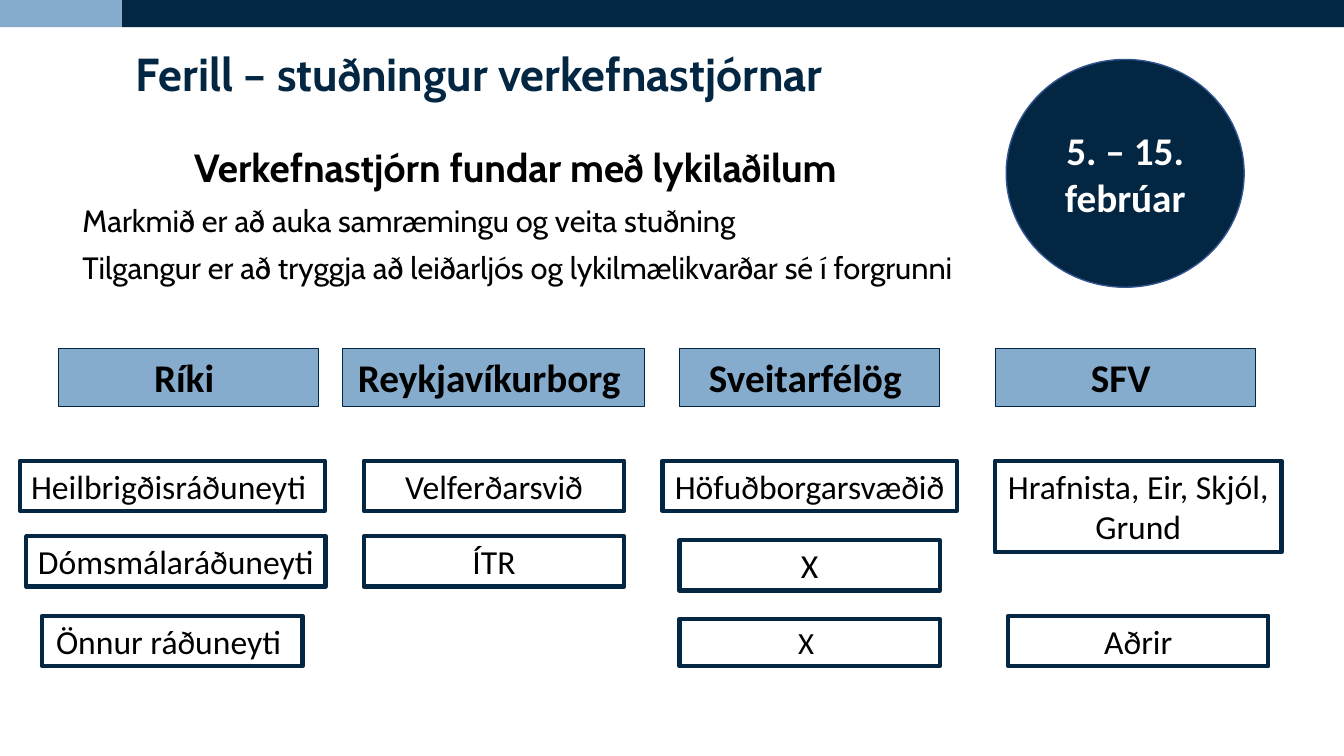
from pptx import Presentation
from pptx.dml.color import RGBColor
from pptx.enum.shapes import MSO_SHAPE as Shape
from pptx.enum.text import MSO_ANCHOR as Anchor, MSO_AUTO_SIZE as AutoSize, PP_ALIGN as Align
from pptx.util import Inches, Pt

COLUMNS, ROWS = 133.3, 75
COLORS = {"navy": "032742", "sky": "85ABCD", "rim": "325491",
          "black": "000000", "white": "FFFFFF"}


class SlideBuilder:
    """Draws on one slide; lengths are columns and rows of a fine grid."""

    def __init__(self, deck):
        self.column = deck.slide_width / COLUMNS
        self.row = deck.slide_height / ROWS
        self.shapes = deck.slides.add_slide(deck.slide_layouts[6]).shapes

    def place(self, left, top, width, height):
        return (round(left * self.column), round(top * self.row),
                round(width * self.column), round(height * self.row))

    def color(self, name):
        return RGBColor.from_string(COLORS[name])

    def add_words(self, paragraph, text, size, font, color="black", bold=False):
        run = paragraph.add_run()
        run.text = text
        run.font.size, run.font.name, run.font.bold = Pt(size), font, bold
        run.font.color.rgb = self.color(color)

    def panel(self, area, fill=None, line=None, weight=1, kind=Shape.RECTANGLE):
        panel = self.shapes.add_shape(kind, *self.place(*area))
        panel.shadow.inherit = False
        if fill:
            panel.fill.solid()
            panel.fill.fore_color.rgb = self.color(fill)
        else:
            panel.fill.background()
        if line:
            panel.line.color.rgb = self.color(line)
            panel.line.width = Pt(weight)
        else:
            panel.line.fill.background()
        return panel

    def label(self, area, text, size, color="black", bold=False,
              anchor=Anchor.TOP, **look):
        """Add a panel with centred text."""
        frame = self.panel(area, **look).text_frame
        frame.word_wrap = True
        frame.vertical_anchor = anchor
        if anchor == Anchor.TOP:
            frame.auto_size = AutoSize.SHAPE_TO_FIT_TEXT
        paragraph = frame.paragraphs[0]
        paragraph.alignment = Align.CENTER
        self.add_words(paragraph, text, size, "Calibri", color, bold)

    def text(self, area, lines, spacing):
        """Add a text box from (text, size, color, bold, alignment) lines."""
        frame = self.shapes.add_textbox(*self.place(*area)).text_frame
        frame.word_wrap = True
        for number, (words, size, color, bold, alignment) in enumerate(lines):
            paragraph = frame.add_paragraph() if number else frame.paragraphs[0]
            paragraph.alignment = alignment
            paragraph.line_spacing = spacing
            paragraph.space_before = Pt(10 if number else 0)
            self.add_words(paragraph, words, size, "Cabin", color, bold)


# Each group: heading, its left and width, then (text, left, top, width, height, size)
GROUPS = [
    ("Ríki ", 5.8, 25.8, [
        ("Heilbrigðisráðuneyti ", 2, 45.7, 30.2, 5, 24),
        ("Dómsmálaráðuneyti", 2.6, 53.2, 29.7, 5, 24),
        ("Önnur ráðuneyti ", 4.2, 61.1, 25.8, 5, 24)]),
    ("Reykjavíkurborg ", 34, 29.9, [
        ("Velferðarsvið", 36.1, 45.7, 25.8, 5, 24),
        ("ÍTR", 36.1, 53.2, 25.8, 5, 24)]),
    ("Sveitarfélög ", 67.4, 25.8, [
        ("Höfuðborgarsvæðið", 65.7, 45.7, 29.2, 5, 24),
        ("X", 67.4, 53.6, 25.8, 5, 24),
        ("X ", 67.4, 61.4, 25.8, 4.7, 22)]),
    ("SFV ", 98.7, 25.8, [
        ("Hrafnista, Eir, Skjól, Grund", 98.7, 45.7, 28.4, 9.1, 24),
        ("Aðrir", 100, 61.1, 25.8, 5, 24)]),
]


def main():
    deck = Presentation()
    deck.slide_width, deck.slide_height = Inches(13.33), Inches(7.5)
    slide = SlideBuilder(deck)

    slide.panel((12.1, 0, COLUMNS - 12.1, 2.7), fill="navy")
    slide.panel((0, 0, 12.1, 2.7), fill="sky")
    slide.text((12.5, 4.6, 108.3, 8.6), [
        ("Ferill – stuðningur verkefnastjórnar", 33, "navy", True, Align.LEFT)], 0.9)
    slide.text((7.2, 15.1, 88.7, 14.5), [
        ("Verkefnastjórn fundar með lykilaðilum ", 28, "black", True, Align.CENTER),
        ("Markmið er að auka samræmingu og veita stuðning",
         22, "black", False, Align.LEFT),
        ("Tilgangur er að tryggja að leiðarljós og lykilmælikvarðar sé í forgrunni",
         22, "black", False, Align.LEFT)], Pt(24))

    for heading, left, width, members in GROUPS:
        slide.label((left, 34.6, width, 5.7), heading, 28, bold=True,
                    fill="sky", line="navy", weight=0.75)
        for member, *area, size in members:
            slide.label(area, member, size, line="navy", weight=3)

    slide.label((99.8, 5.9, 23.6, 22.6), "5. – 15. febrúar", 28, "white", True,
                Anchor.MIDDLE, fill="navy", line="rim", kind=Shape.OVAL)
    deck.save("out.pptx")


if __name__ == "__main__":
    main()
